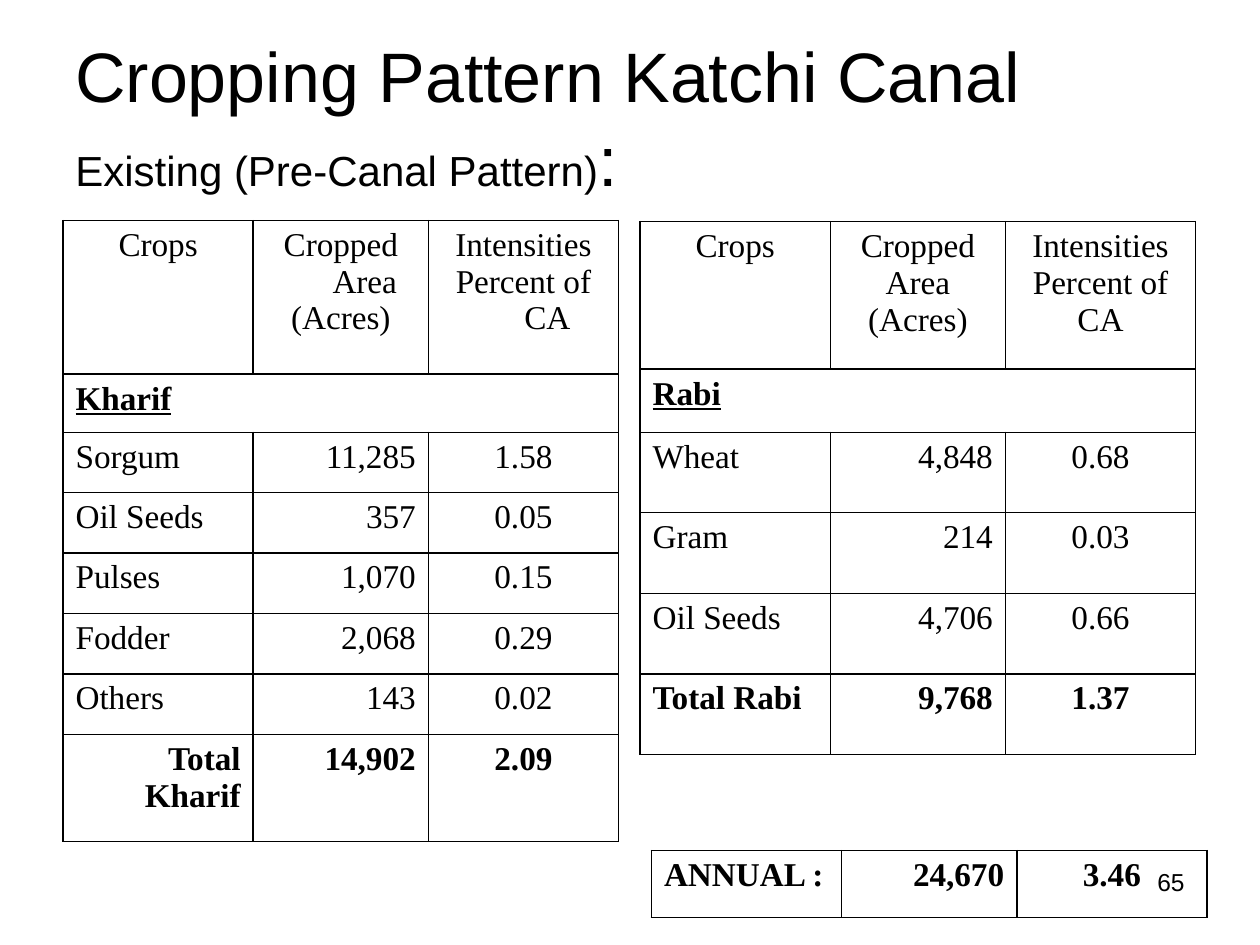
from dataclasses import dataclass

from lxml import etree
from pptx import Presentation
from pptx import util as u
from pptx.dml.color import RGBColor
from pptx.enum import text
from pptx.oxml import ns

BLACK = "000000"
ALIGN = text.PP_ALIGN
COLUMN_WIDTHS = (1.51, 1.39, 1.51)
BODY_ALIGNS = (ALIGN.JUSTIFY, ALIGN.RIGHT, ALIGN.CENTER)
HEADINGS = ("Crops", "Cropped Area\n(Acres)", "Intensities\nPercent of CA")


@dataclass
class CropTable:
    left: float
    top: float
    row_heights: list[float]
    rows: list[tuple[str, ...]]
    hanging: float = 0
    total_align: ALIGN = ALIGN.JUSTIFY


CROP_TABLES = [
    CropTable(
        0.5, 1.75, [1.22, 0.46] + [0.48] * 5 + [0.85],
        [
            HEADINGS,
            ("Kharif",),
            ("Sorgum", "11,285", "1.58"),
            ("Oil Seeds", "357", "0.05"),
            ("Pulses", "1,070", "0.15"),
            ("Fodder", "2,068", "0.29"),
            ("Others", "143", "0.02"),
            ("Total Kharif", "14,902", "2.09"),
        ],
        hanging=0.38, total_align=ALIGN.RIGHT,
    ),
    CropTable(
        5.08, 1.76, [1.17, 0.5] + [0.64] * 4,
        [
            HEADINGS,
            ("Rabi",),
            ("Wheat", "4,848", "0.68"),
            ("Gram", "214", "0.03"),
            ("Oil Seeds", "4,706", "0.66"),
            ("Total Rabi", "9,768", "1.37"),
        ],
    ),
    CropTable(5.17, 6.75, [0.53], [("ANNUAL :", "24,670", "3.46")]),
]


def color(value: str) -> RGBColor:
    return RGBColor.from_string(value)


def style_font(font, **values) -> None:
    for name, value in values.items():
        setattr(font, name, value)
    font.color.rgb = color(BLACK)


def set_borders(cell, horizontal: float) -> None:
    properties = cell._tc.get_or_add_tcPr()
    for side, width in {"L": 1, "R": 1, "T": horizontal, "B": horizontal}.items():
        line = etree.SubElement(properties, ns.qn(f"a:ln{side}"), w=str(u.Pt(width)))
        fill = etree.SubElement(line, ns.qn("a:solidFill"))
        etree.SubElement(fill, ns.qn("a:srgbClr"), val=BLACK)


def write_cell(cell, words: str, align: ALIGN, hanging: float, bold: bool, underline: bool) -> None:
    cell.text = words
    for paragraph in cell.text_frame.paragraphs:
        paragraph.alignment = align
        if hanging:
            indents = paragraph._p.get_or_add_pPr()
            indents.set("marL", str(u.Inches(hanging)))
            indents.set("indent", str(u.Inches(-hanging)))
        for run in paragraph.runs:
            style_font(run.font, name="Times New Roman", size=u.Pt(19), bold=bold, underline=underline)


def draw_crop_table(slide, crops: CropTable) -> None:
    grid = slide.shapes.add_table(
        len(crops.rows), len(COLUMN_WIDTHS), u.Inches(crops.left), u.Inches(crops.top),
        u.Inches(sum(COLUMN_WIDTHS)), u.Inches(sum(crops.row_heights)),
    ).table
    grid.first_row = grid.horz_banding = False
    for column, width in zip(grid.columns, COLUMN_WIDTHS):
        column.width = u.Inches(width)
    last = len(crops.rows) - 1
    for index, (values, height) in enumerate(zip(crops.rows, crops.row_heights)):
        grid.rows[index].height = u.Inches(height)
        for cell in grid.rows[index].cells:
            set_borders(cell, 1 if index in (0, last) else 0.75)
            cell.fill.background()
        is_season = len(values) == 1
        if is_season:
            grid.cell(index, 0).merge(grid.cell(index, len(COLUMN_WIDTHS) - 1))
        for position, words in enumerate(values):
            align = BODY_ALIGNS[position]
            if values is HEADINGS:
                align = ALIGN.CENTER
            elif index == last and position == 0:
                align = crops.total_align
            write_cell(grid.cell(index, position), words, align, crops.hanging,
                       is_season or index == last, is_season)


def add_text_area(slide, left: float, top: float, width: float, height: float, anchor):
    frame = slide.shapes.add_textbox(
        u.Inches(left), u.Inches(top), u.Inches(width), u.Inches(height)
    ).text_frame
    frame.word_wrap = True
    frame.vertical_anchor = anchor
    return frame.paragraphs[0]


def add_words(paragraph, words: str, size: float) -> None:
    run = paragraph.add_run()
    run.text = words
    style_font(run.font, name="Arial", size=u.Pt(size))


def main() -> None:
    deck = Presentation()
    deck.slide_width, deck.slide_height = u.Inches(10), u.Inches(7.5)
    slide = deck.slides.add_slide(deck.slide_layouts[6])

    title = add_text_area(slide, 0.5, 0.3, 9, 1.25, text.MSO_ANCHOR.MIDDLE)
    add_words(title, "Cropping Pattern Katchi Canal", 40)
    title.add_line_break()
    add_words(title, "Existing (Pre-Canal Pattern)", 24)
    add_words(title, ":", 40)

    for crops in CROP_TABLES:
        draw_crop_table(slide, crops)

    page_number = add_text_area(slide, 7.17, 6.83, 2.33, 0.52, text.MSO_ANCHOR.TOP)
    page_number.alignment = ALIGN.RIGHT
    add_words(page_number, "65", 14)

    deck.save("out.pptx")


if __name__ == "__main__":
    main()
